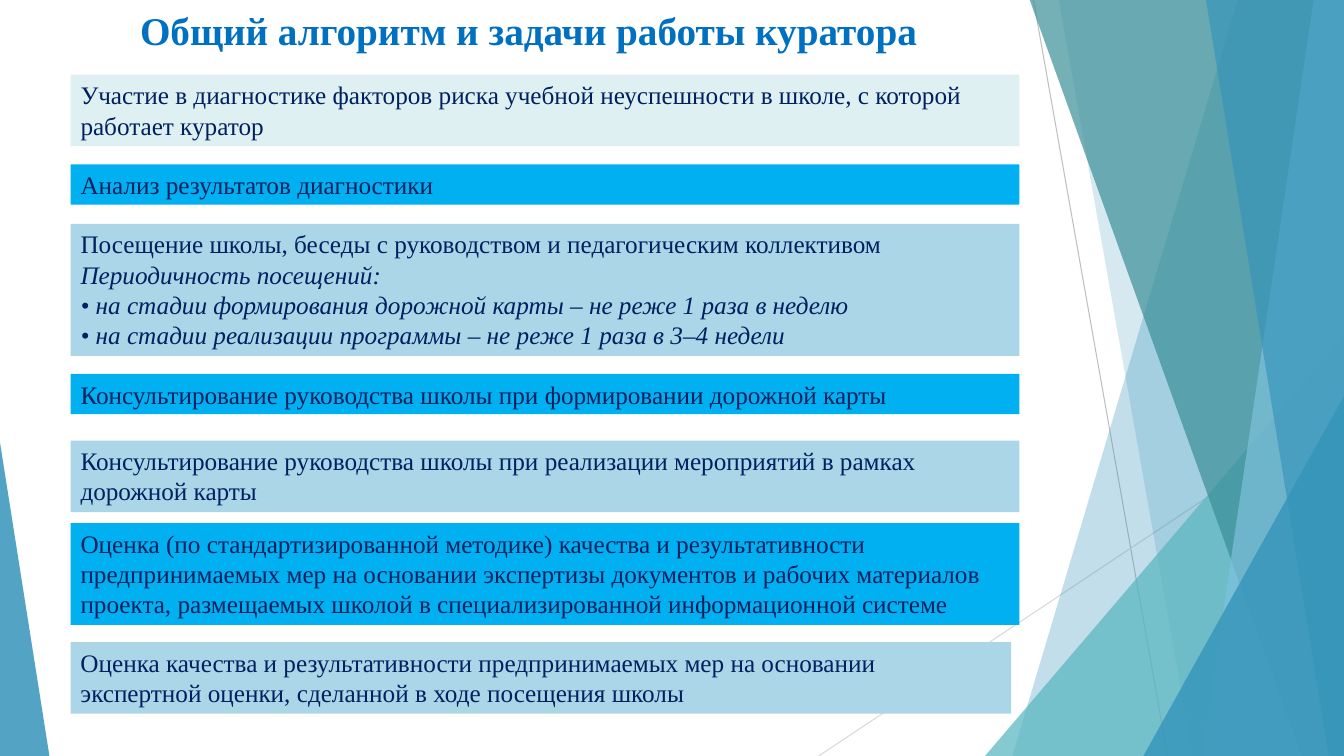
from lxml import etree
from pptx import Presentation
from pptx.dml.color import RGBColor
from pptx.enum.shapes import MSO_CONNECTOR, MSO_SHAPE
from pptx.enum.text import MSO_ANCHOR, MSO_AUTO_SIZE, PP_ALIGN
from pptx.oxml.ns import qn
from pptx.util import Inches, Pt

RECT = MSO_SHAPE.RECTANGLE
TRIANGLE = MSO_SHAPE.ISOSCELES_TRIANGLE
STRAIGHT = MSO_CONNECTOR.STRAIGHT
TOP = MSO_ANCHOR.TOP
LEFT = PP_ALIGN.LEFT
FIT_SHAPE = MSO_AUTO_SIZE.SHAPE_TO_FIT_TEXT
FONT = "Times New Roman"
WIDTH, HEIGHT = 13.33, 7.5
PALE, BRIGHT, SOFT = "DEF0F2", "00B0F0", "AAD6E7"


def rgb(value):
    return RGBColor.from_string(value)


def paint(sp, color, opacity=100):
    sp.shadow.inherit = False
    sp.line.fill.background()
    sp.fill.solid()
    sp.fill.fore_color.rgb = rgb(color)
    if opacity < 100:
        clr = sp.fill._xPr.find(qn("a:solidFill")).find(qn("a:srgbClr"))
        etree.SubElement(clr, qn("a:alpha")).set("val", str(opacity * 1000))


prs = Presentation()
prs.slide_width, prs.slide_height = Inches(WIDTH), Inches(HEIGHT)
s = prs.slides.add_slide(prs.slide_layouts[6])

# Thin background lines
for x1, y1, x2, y2, color in [
    (10.25, 0, 11.58, HEIGHT, "BFBFBF"),
    (WIDTH, 4.03, 8.12, HEIGHT, "D9D9D9"),
]:
    line = s.shapes.add_connector(STRAIGHT, Inches(x1), Inches(y1), Inches(x2), Inches(y2))
    line.line.color.rgb = rgb(color)
    line.line.width = Pt(0.75)
    etree.SubElement(line._element.spPr, qn("a:effectLst"))

# Translucent facets: bands (top x, bottom x) reach the right edge,
# triangles have (left, top, width, apex)
for kind, geometry, color, opacity in [
    ("band", (12.28, 10.04), "3494BA", 30),
    ("band", (10.5, 11.83), "3494BA", 20),
    ("triangle", (9.77, 3.33, 3.56, 1), "58B6C0", 72),
    ("band", (10.21, 12.91), "3A8F98", 70),
    ("band", (13.03, 11.92), "7FC1DB", 70),
    ("band", (11.96, 13.18), "3494BA", 65),
    ("triangle", (11.34, 3.93, 1.99, 1), "3494BA", 80),
    ("triangle", (0, 4.39, 0.49, 0), "3494BA", 85),
]:
    if kind == "band":
        top_x, bottom_x = geometry
        fb = s.shapes.build_freeform(Inches(top_x), Inches(-0.01))
        corners = [(WIDTH, -0.01), (WIDTH, HEIGHT), (bottom_x, HEIGHT)]
        fb.add_line_segments([(Inches(x), Inches(y)) for x, y in corners], close=True)
        sp = fb.convert_to_shape()
    else:
        x, y, w, apex = geometry
        sp = s.shapes.add_shape(TRIANGLE, Inches(x), Inches(y), Inches(w), Inches(HEIGHT - y))
        sp.adjustments[0] = apex
    paint(sp, color, opacity)

# Title
title = s.shapes.add_textbox(Inches(1.29), Inches(0.01), Inches(8.09), Inches(0.57))
tf = title.text_frame
tf.word_wrap = False
tf.auto_size = FIT_SHAPE
r = tf.paragraphs[0].add_run()
r.text = "Общий алгоритм и задачи работы куратора"
r.font.name, r.font.size, r.font.bold = FONT, Pt(28), True
r.font.color.rgb = rgb("0070C0")

# Task bars: top, width, height, fill, paragraphs (those after the first are italic)
for y, w, h, color, lines in [
    (0.74, 9.41, 0.71, PALE, [
        "Участие в диагностике факторов риска учебной неуспешности в школе, "
        "с которой работает куратор"]),
    (1.63, 9.41, 0.4, BRIGHT, ["Анализ результатов диагностики"]),
    (2.22, 9.41, 1.31, SOFT, [
        "Посещение школы, беседы с руководством и педагогическим коллективом",
        "Периодичность посещений:",
        "• на стадии формирования дорожной карты – не реже 1 раза в неделю",
        "• на стадии реализации программы – не реже 1 раза в 3–4 недели"]),
    (3.71, 9.41, 0.4, BRIGHT, [
        "Консультирование руководства школы при формировании дорожной карты"]),
    (4.37, 9.41, 0.71, SOFT, [
        "Консультирование руководства школы при реализации мероприятий "
        "в рамках дорожной карты"]),
    (5.19, 9.41, 1.01, BRIGHT, [
        "Оценка (по стандартизированной методике) качества и результативности "
        "предпринимаемых мер на основании экспертизы документов и рабочих материалов "
        "проекта, размещаемых школой в специализированной информационной системе"]),
    (6.37, 9.33, 0.71, SOFT, [
        "Оценка качества и результативности предпринимаемых мер на основании "
        "экспертной оценки, сделанной в ходе посещения школы"]),
]:
    sp = s.shapes.add_shape(RECT, Inches(0.7), Inches(y), Inches(w), Inches(h))
    paint(sp, color)
    tf = sp.text_frame
    tf.word_wrap = True
    tf.auto_size = FIT_SHAPE
    tf.vertical_anchor = TOP
    for i, text in enumerate(lines):
        p = tf.add_paragraph() if i else tf.paragraphs[0]
        p.alignment = LEFT
        r = p.add_run()
        r.text = text
        r.font.name, r.font.size, r.font.italic = FONT, Pt(18), i > 0
        r.font.color.rgb = rgb("002060")

prs.save("out.pptx")
